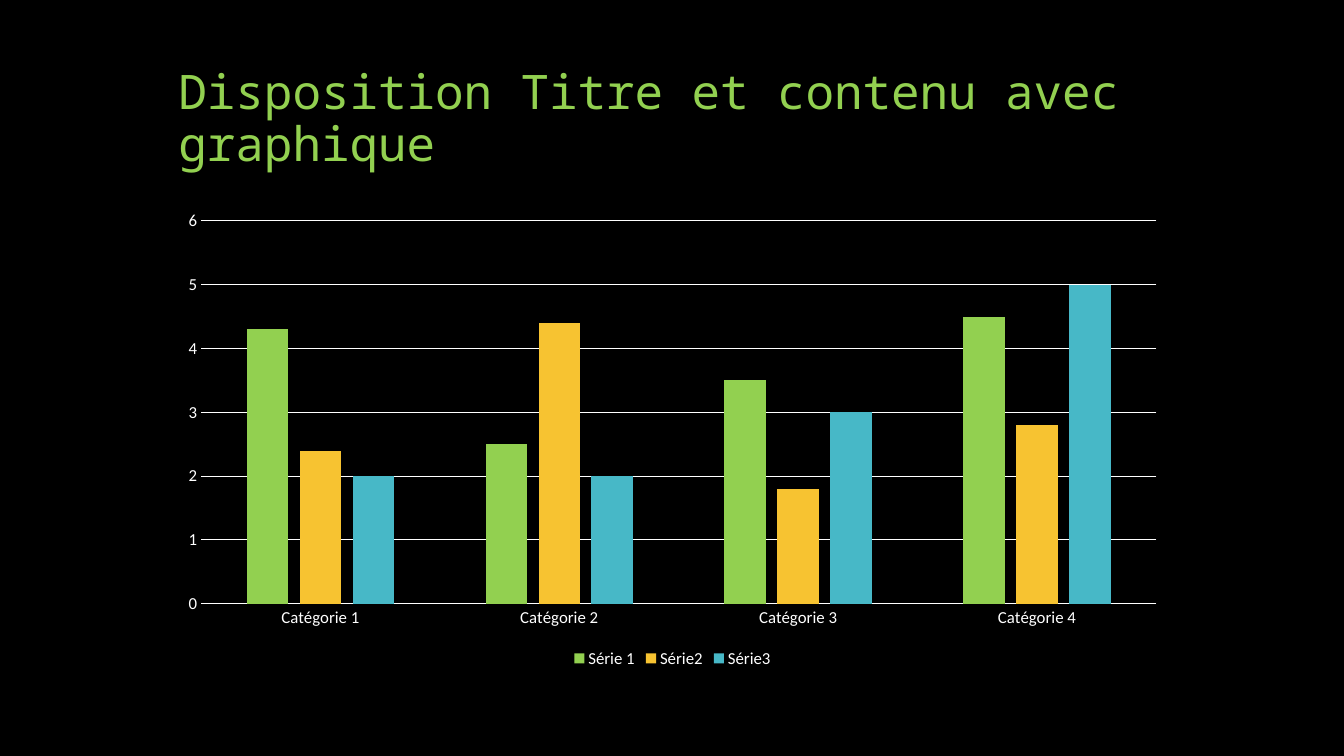
from dataclasses import dataclass

from pptx import Presentation
from pptx.chart.axis import CategoryAxis, ValueAxis
from pptx.chart.chart import Chart
from pptx.chart.data import CategoryChartData as ChartData
from pptx.dml.color import RGBColor
from pptx.dml.fill import FillFormat as Fill
from pptx.dml.line import LineFormat as Line
from pptx.enum.chart import XL_CHART_TYPE as Kind
from pptx.enum.chart import XL_LEGEND_POSITION as Spot
from pptx.enum.chart import XL_TICK_MARK as Tick
from pptx.enum.text import MSO_ANCHOR as Anchor
from pptx.enum.text import MSO_AUTO_SIZE as Fit
from pptx.enum.text import PP_ALIGN as Align
from pptx.slide import Slide
from pptx.text.text import Font
from pptx.util import Inches, Pt

BLACK, WHITE, GREEN = "000000", "FFFFFF", "92D050"
LEFT, WIDTH = Inches(1.67), Inches(10)


@dataclass(frozen=True)
class Series:
    name: str
    vals: tuple[float, ...]
    color: str


CATS = [f"Catégorie {n}" for n in range(1, 5)]
SERIES = (
    Series("Série 1", (4.3, 2.5, 3.5, 4.5), GREEN),
    Series("Série2", (2.4, 4.4, 1.8, 2.8), "F7C331"),
    Series("Série3", (2, 2, 3, 5), "47B8C7"),
)


def paint(fill: Fill, color: str) -> None:
    fill.solid()
    fill.fore_color.rgb = RGBColor.from_string(color)


def set_font(font: Font, name: str, size: float, color: str) -> None:
    font.name, font.size, font.bold = name, Pt(size), False
    paint(font.fill, color)


def set_line(line: Line) -> None:
    paint(line.fill, WHITE)
    line.width = Pt(0.75)


def set_axis(axis: CategoryAxis | ValueAxis) -> None:
    axis.major_tick_mark = axis.minor_tick_mark = Tick.NONE
    set_font(axis.tick_labels.font, "Calibri", 12, WHITE)


def add_title(slide: Slide, text: str) -> None:
    title = slide.shapes.title
    title.left, title.top = LEFT, Inches(0.5)
    title.width, title.height = WIDTH, Inches(1.25)
    frame = title.text_frame
    frame.word_wrap, frame.auto_size = True, Fit.NONE
    frame.vertical_anchor = Anchor.BOTTOM
    para = frame.paragraphs[0]
    para.alignment, para.line_spacing = Align.LEFT, 0.9
    run = para.add_run()
    run.text = text
    set_font(run.font, "Noto Sans Mono", 34, GREEN)


def style_chart(chart: Chart) -> None:
    set_font(chart.font, "Calibri", 10, WHITE)
    chart.has_title = False
    chart.has_legend = True
    chart.legend.position = Spot.BOTTOM
    chart.legend.include_in_layout = False
    set_font(chart.legend.font, "Calibri", 12, WHITE)

    cat, val = chart.category_axis, chart.value_axis
    set_axis(cat)
    set_axis(val)
    set_line(cat.format.line)
    val.format.line.fill.background()
    val.has_major_gridlines = True
    set_line(val.major_gridlines.format.line)
    val.minimum_scale, val.maximum_scale, val.major_unit = 0, 6, 1

    plot = chart.plots[0]
    plot.gap_width, plot.overlap = 219, -27
    plot.vary_by_categories = False
    for bars, item in zip(plot.series, SERIES):
        bars.invert_if_negative = False
        paint(bars.format.fill, item.color)


def add_bars(slide: Slide) -> None:
    data = ChartData(number_format="General")
    data.categories = CATS
    for item in SERIES:
        data.add_series(item.name, item.vals)
    frame = slide.shapes.add_chart(
        Kind.COLUMN_CLUSTERED, LEFT, Inches(2), WIDTH, Inches(4.67), data
    )
    style_chart(frame.chart)


def main() -> None:
    deck = Presentation()
    deck.slide_width, deck.slide_height = Inches(13.33), Inches(7.5)
    slide = deck.slides.add_slide(deck.slide_layouts.get_by_name("Title Only"))
    paint(slide.background.fill, BLACK)
    add_title(slide, "Disposition Titre et contenu avec graphique")
    add_bars(slide)
    deck.save("out.pptx")


if __name__ == "__main__":
    main()
